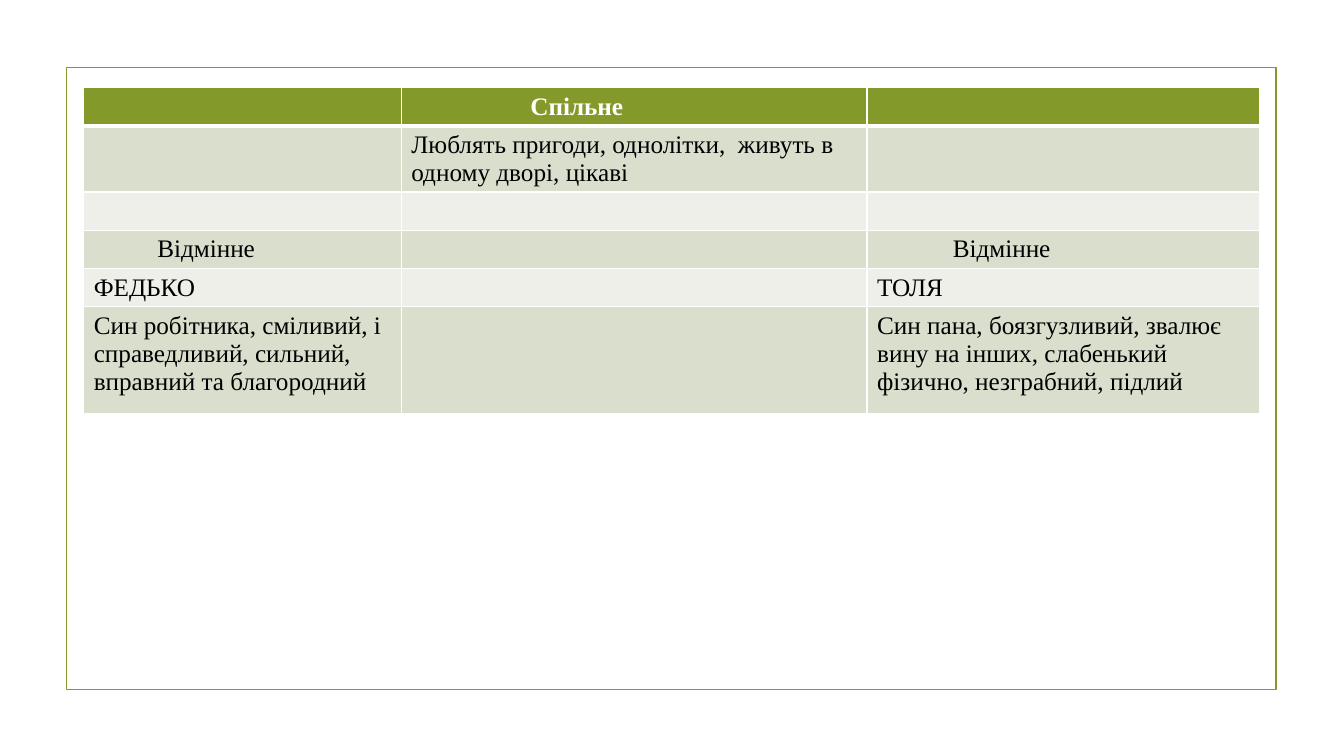
from lxml import etree
from pptx import Presentation
from pptx.dml.color import RGBColor
from pptx.enum import shapes
from pptx.oxml import ns
from pptx.util import Inches, Pt

FONT = "Times New Roman"
GREEN, WHITE, BLACK = "83992A", "FFFFFF", "000000"
BANDS = ("D9DECD", "EDEFE8")
COLUMN_WIDTHS = (3.15, 4.62, 3.89)
ROW_HEIGHTS = (0.38, 0.64, 0.38, 0.38, 0.38, 1.06)
COMPARISON = (
    ("", "Спільне", ""),
    ("", "Люблять пригоди, однолітки,  живуть в одному дворі, цікаві", ""),
    ("", "", ""),
    ("Відмінне", "", "Відмінне"),
    ("ФЕДЬКО", "", "ТОЛЯ"),
    ("Син робітника, сміливий, і справедливий, сильний, вправний та благородний", "",
     "Син пана, боязгузливий, звалює вину на інших, слабенький фізично, незграбний, підлий"),
)
HEADING_MARGINS = {(0, 1): 1.28, (3, 0): 0.73, (3, 2): 0.85}


def rgb(value):
    return RGBColor.from_string(value)


def set_borders(cell, bottom_width):
    properties = cell._tc.get_or_add_tcPr()
    for index, side in enumerate(("lnL", "lnR", "lnT", "lnB")):
        width = bottom_width if side == "lnB" else 1
        border = etree.Element(ns.qn(f"a:{side}"), w=str(Pt(width)))
        fill = etree.SubElement(border, ns.qn("a:solidFill"))
        etree.SubElement(fill, ns.qn("a:srgbClr"), val=WHITE)
        properties.insert(index, border)


def set_empty_font(paragraph):
    """Keep an empty cell as low as one line of the table's text."""
    end = etree.SubElement(paragraph._p, ns.qn("a:endParaRPr"), sz="1800")
    etree.SubElement(end, ns.qn("a:latin"), typeface=FONT)


def fill_cell(cell, wording, is_header, band):
    cell.fill.solid()
    cell.fill.fore_color.rgb = rgb(GREEN if is_header else band)
    set_borders(cell, 3 if is_header else 1)
    paragraph = cell.text_frame.paragraphs[0]
    if not wording:
        set_empty_font(paragraph)
        return
    paragraph.text = wording
    font = paragraph.runs[0].font
    font.name, font.size, font.bold = FONT, Pt(18), is_header
    font.color.rgb = rgb(WHITE if is_header else BLACK)


def add_frame(slide, left, top, width, height):
    frame = slide.shapes.add_shape(
        shapes.MSO_SHAPE.RECTANGLE, Inches(left), Inches(top), Inches(width), Inches(height))
    frame.shadow.inherit = False
    frame.fill.background()
    frame.line.color.rgb = rgb(GREEN)
    frame.line.width = Pt(1.25)


def add_comparison(slide, left, top):
    table = slide.shapes.add_table(
        len(COMPARISON), len(COLUMN_WIDTHS), Inches(left), Inches(top),
        Inches(sum(COLUMN_WIDTHS)), Inches(sum(ROW_HEIGHTS))).table
    for column, width in zip(table.columns, COLUMN_WIDTHS):
        column.width = Inches(width)
    for r, (row, height) in enumerate(zip(table.rows, ROW_HEIGHTS)):
        row.height = Inches(height)
        for c, wording in enumerate(COMPARISON[r]):
            fill_cell(table.cell(r, c), wording, r == 0, BANDS[(r - 1) % 2])
    for (r, c), margin in HEADING_MARGINS.items():
        table.cell(r, c).margin_left = Inches(margin)


def main():
    deck = Presentation()
    deck.slide_width, deck.slide_height = Inches(13.33), Inches(7.5)
    slide = deck.slides.add_slide(deck.slide_layouts[6])
    add_frame(slide, 0.66, 0.67, 12, 6.17)
    add_comparison(slide, 0.83, 0.87)
    deck.save("out.pptx")


if __name__ == "__main__":
    main()
